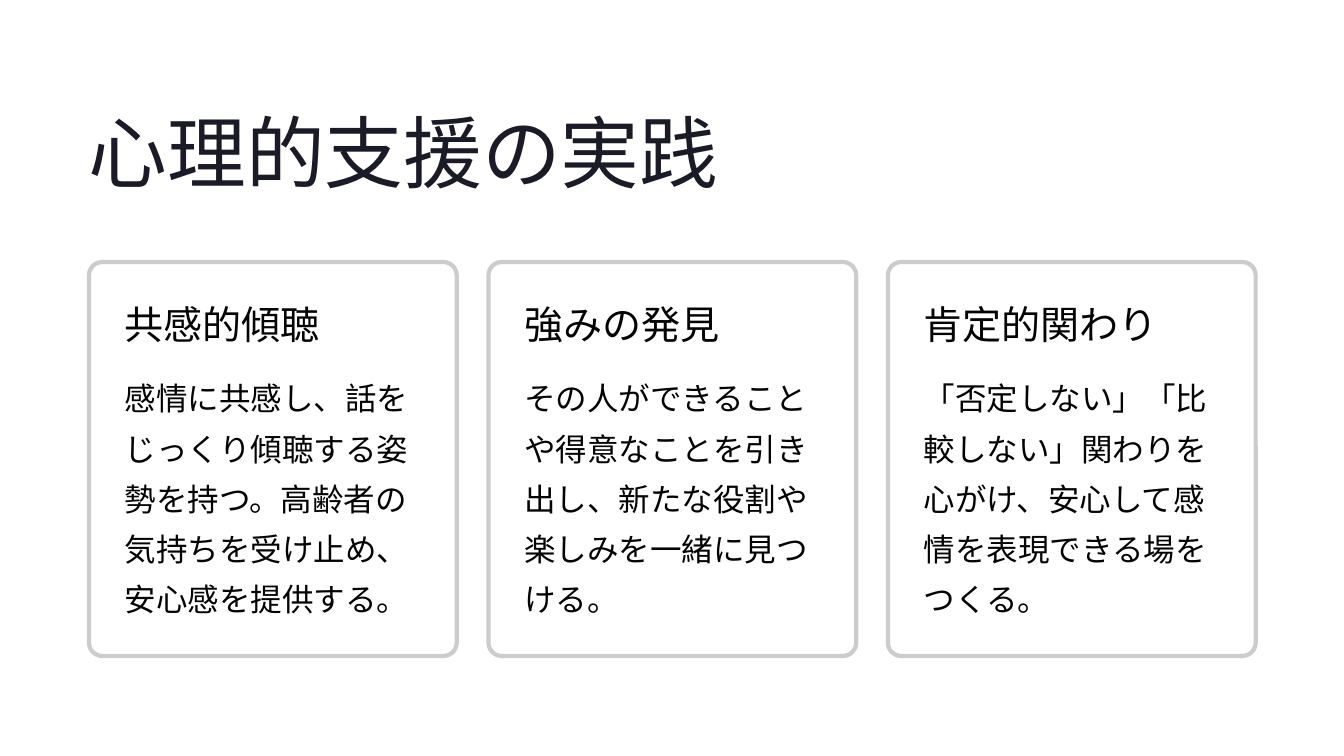
from lxml import etree
from pptx import Presentation
from pptx.dml.color import RGBColor
from pptx.enum import shapes, text
from pptx.oxml import ns
from pptx.util import Pt

WHITE = RGBColor(0xFF, 0xFF, 0xFF)
BORDER = RGBColor(0xCC, 0xCC, 0xCC)
NAVY = RGBColor(0x1B, 0x1B, 0x27)
INK = RGBColor(0x03, 0x03, 0x03)

TITLE_STYLE = {"name": "Inter", "size": Pt(67.5)}
HEADING_STYLE = {"name": "Inter", "size": Pt(33.5)}
BODY_STYLE = {"name": "Lato", "size": Pt(27)}

CARDS = [
    ("共感的傾聴", "感情に共感し、話をじっくり傾聴する姿勢を持つ。高齢者の気持ちを受け止め、安心感を提供する。"),
    ("強みの発見", "その人ができることや得意なことを引き出し、新たな役割や楽しみを一緒に見つける。"),
    ("肯定的関わり", "「否定しない」「比較しない」関わりを心がけ、安心して感情を表現できる場をつくる。"),
]
LEFT, CARD_TOP = 76.3, 224.6
CARD_WIDTH, CARD_HEIGHT = 315.2, 337.7
CARD_PITCH = 342.4
PADDING = 30.6

prs = Presentation()
prs.slide_width, prs.slide_height = Pt(1152), Pt(648)
slide = prs.slides.add_slide(prs.slide_layouts[6])


def add_text(words, left, top, width, height, style, color, leading, wrap):
    frame = slide.shapes.add_textbox(Pt(left), Pt(top), Pt(width), Pt(height)).text_frame
    settings = {"margin_left": 0, "margin_top": 0, "margin_right": 0, "margin_bottom": 0,
                "word_wrap": wrap, "vertical_anchor": text.MSO_ANCHOR.TOP}
    for key, value in settings.items():
        setattr(frame, key, value)
    line = frame.paragraphs[0]
    line.line_spacing = Pt(leading)
    run = line.add_run()
    run.text = words
    for key, value in style.items():
        setattr(run.font, key, value)
    run.font.color.rgb = color


# Title
add_text("心理的支援の実践", LEFT, 85.7, 679, 85, TITLE_STYLE, NAVY, 84.5, False)

# Three cards, each with a heading and a description
for index, (heading, description) in enumerate(CARDS):
    card_left = LEFT + index * CARD_PITCH
    card = slide.shapes.add_shape(shapes.MSO_SHAPE.ROUNDED_RECTANGLE, Pt(card_left),
                                  Pt(CARD_TOP), Pt(CARD_WIDTH), Pt(CARD_HEIGHT))
    card.adjustments[0] = 0.036
    card.shadow.inherit = False
    card.fill.solid()
    card.fill.fore_color.rgb = WHITE
    card.line.color.rgb = BORDER
    card.line.width = Pt(3.6)

    # Slightly transparent fill
    fill_color = card.fill._xPr.find(ns.qn("a:solidFill"))[0]
    etree.SubElement(fill_color, ns.qn("a:alpha"), val="95000")

    inner_left = card_left + PADDING
    inner_width = CARD_WIDTH - 2 * PADDING
    add_text(heading, inner_left, CARD_TOP + 31, inner_width, 42.5,
             HEADING_STYLE, INK, 42, False)
    add_text(description, inner_left, CARD_TOP + 90, inner_width, 217.4,
             BODY_STYLE, INK, 43, True)

prs.save("out.pptx")
